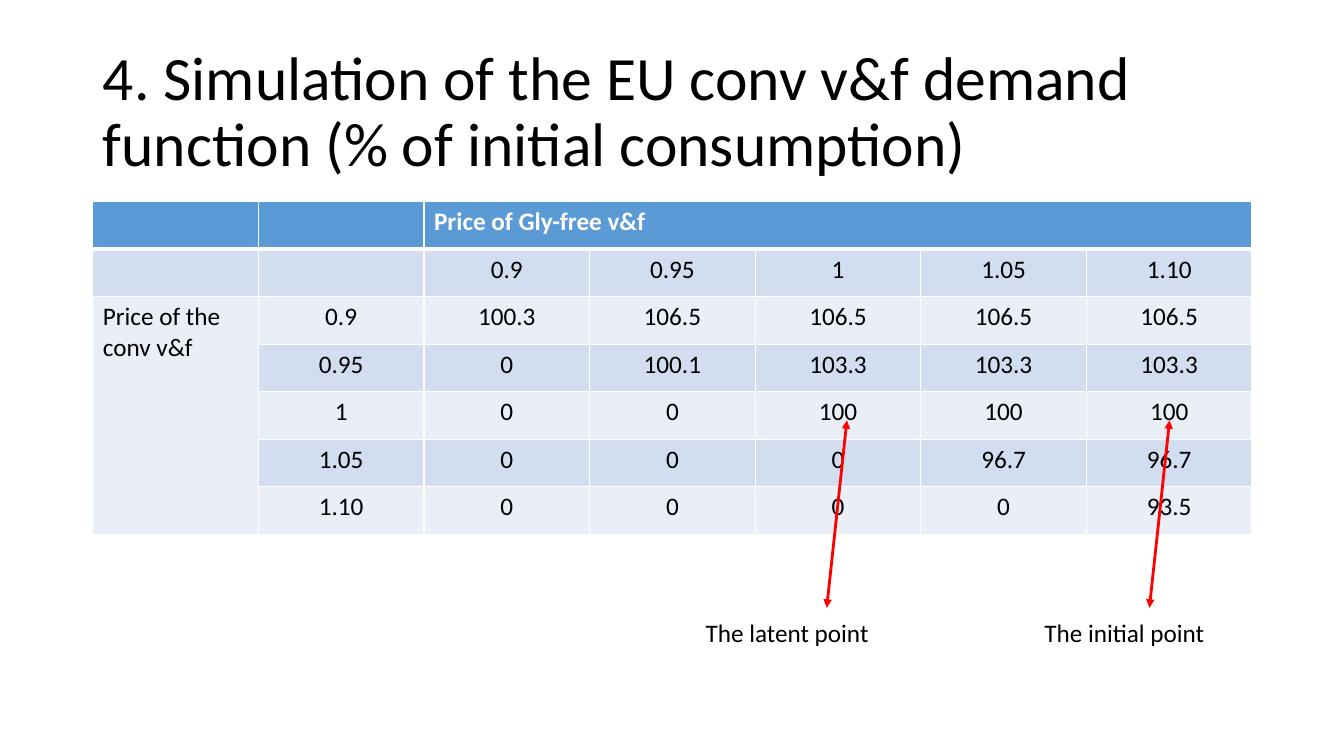
from lxml.etree import SubElement
from pptx import Presentation
from pptx.dml.color import RGBColor
from pptx.enum.shapes import MSO_CONNECTOR
from pptx.enum.text import MSO_ANCHOR, MSO_AUTO_SIZE, PP_ALIGN
from pptx.oxml.ns import qn
from pptx.util import Inches, Pt

FONT = "Calibri"
BLACK, WHITE, RED = "000000", "FFFFFF", "FF0000"
HEADER, BANDS = "5B9BD5", ("EAEFF7", "D2DEEF")
PRICES = ["0.9", "0.95", "1", "1.05", "1.10"]
CONSUMPTION = [
    ["100.3", "106.5", "106.5", "106.5", "106.5"],
    ["0", "100.1", "103.3", "103.3", "103.3"],
    ["0", "0", "100", "100", "100"],
    ["0", "0", "0", "96.7", "96.7"],
    ["0", "0", "0", "0", "93.5"],
]


def color(value):
    """Turn a hex string into a colour."""
    return RGBColor.from_string(value)


def add_text(paragraph, text, size=18, ink=BLACK, bold=False, align=PP_ALIGN.LEFT):
    """Add one formatted run to a paragraph."""
    paragraph.alignment = align
    run = paragraph.add_run()
    run.text = text
    run.font.name = FONT
    run.font.size = Pt(size)
    run.font.bold = bold
    run.font.color.rgb = color(ink)


def place_title(slide, text, left, top, width, height):
    """Move the title placeholder into its box and fill it."""
    title = slide.shapes.title
    title.left, title.top = Inches(left), Inches(top)
    title.width, title.height = Inches(width), Inches(height)
    frame = title.text_frame
    frame.word_wrap = True
    frame.auto_size = MSO_AUTO_SIZE.NONE
    frame.vertical_anchor = MSO_ANCHOR.MIDDLE
    paragraph = frame.paragraphs[0]
    paragraph.line_spacing = 0.9
    add_text(paragraph, text, size=44)


def style_cell(cell, fill, bottom_width):
    """Give a cell white borders and a solid fill."""
    properties = cell._tc.get_or_add_tcPr()
    widths = {"a:lnL": 1, "a:lnR": 1, "a:lnT": 1, "a:lnB": bottom_width}
    for side, width in widths.items():
        line = SubElement(properties, qn(side), w=str(Pt(width)))
        solid = SubElement(line, qn("a:solidFill"))
        SubElement(solid, qn("a:srgbClr"), val=WHITE)
    cell.fill.solid()
    cell.fill.fore_color.rgb = color(fill)


def add_demand_table(slide, left, top, width, height):
    """Place the table of consumption by the two prices."""
    rows = [["", "", "Price of Gly-free v&f"] + [""] * 4, ["", ""] + PRICES]
    rows += [["", price] + values for price, values in zip(PRICES, CONSUMPTION)]
    rows[2][0] = "Price of the conv v&f"
    count = len(rows)
    table = slide.shapes.add_table(
        count, count, Inches(left), Inches(top), Inches(width), Inches(height)
    ).table
    table.cell(0, 2).merge(table.cell(0, count - 1))
    table.cell(2, 0).merge(table.cell(count - 1, 0))
    for row_index, values in enumerate(rows):
        is_header = row_index == 0
        for column_index, text in enumerate(values):
            cell = table.cell(row_index, column_index)
            band = BANDS[0] if column_index == 0 and row_index > 1 else BANDS[row_index % 2]
            style_cell(cell, HEADER if is_header else band, 3 if is_header else 1)
            if text:
                centred = not is_header and column_index > 0
                add_text(
                    cell.text_frame.paragraphs[0],
                    text,
                    ink=WHITE if is_header else BLACK,
                    bold=is_header,
                    align=PP_ALIGN.CENTER if centred else PP_ALIGN.LEFT,
                )


def add_callout(slide, text, left, top, arrow_left):
    """Place a label and the double arrow from it up to a table value."""
    arrow = slide.shapes.add_connector(
        MSO_CONNECTOR.STRAIGHT,
        Inches(arrow_left), Inches(top - 0.05),
        Inches(arrow_left + 0.2), Inches(top - 1.91),
    )
    arrow.line.color.rgb = color(RED)
    arrow.line.width = Pt(2)
    line = arrow.line._get_or_add_ln()
    for end in ("a:headEnd", "a:tailEnd"):
        SubElement(line, qn(end), type="triangle")
    SubElement(arrow._element.spPr, qn("a:effectLst"))
    label = slide.shapes.add_textbox(Inches(left), Inches(top), Inches(2.1), Inches(0.4))
    label.text_frame.word_wrap = True
    add_text(label.text_frame.paragraphs[0], text)


def build_simulation_slide(presentation):
    """Build the demand simulation slide."""
    slide = presentation.slides.add_slide(presentation.slide_layouts[5])
    place_title(
        slide,
        "4. Simulation of the EU conv v&f demand function (% of initial consumption)",
        0.92, 0.4, 11.5, 1.45,
    )
    add_demand_table(slide, 0.92, 2, 11.5, 3.3)
    add_callout(slide, "The latent point", 6.9, 6.08, 8.2)
    add_callout(slide, "The initial point", 10.26, 6.08, 11.4)


def main():
    """Create and save the presentation."""
    presentation = Presentation()
    presentation.slide_width = Inches(13.33)
    presentation.slide_height = Inches(7.5)
    build_simulation_slide(presentation)
    presentation.save("out.pptx")


if __name__ == "__main__":
    main()
